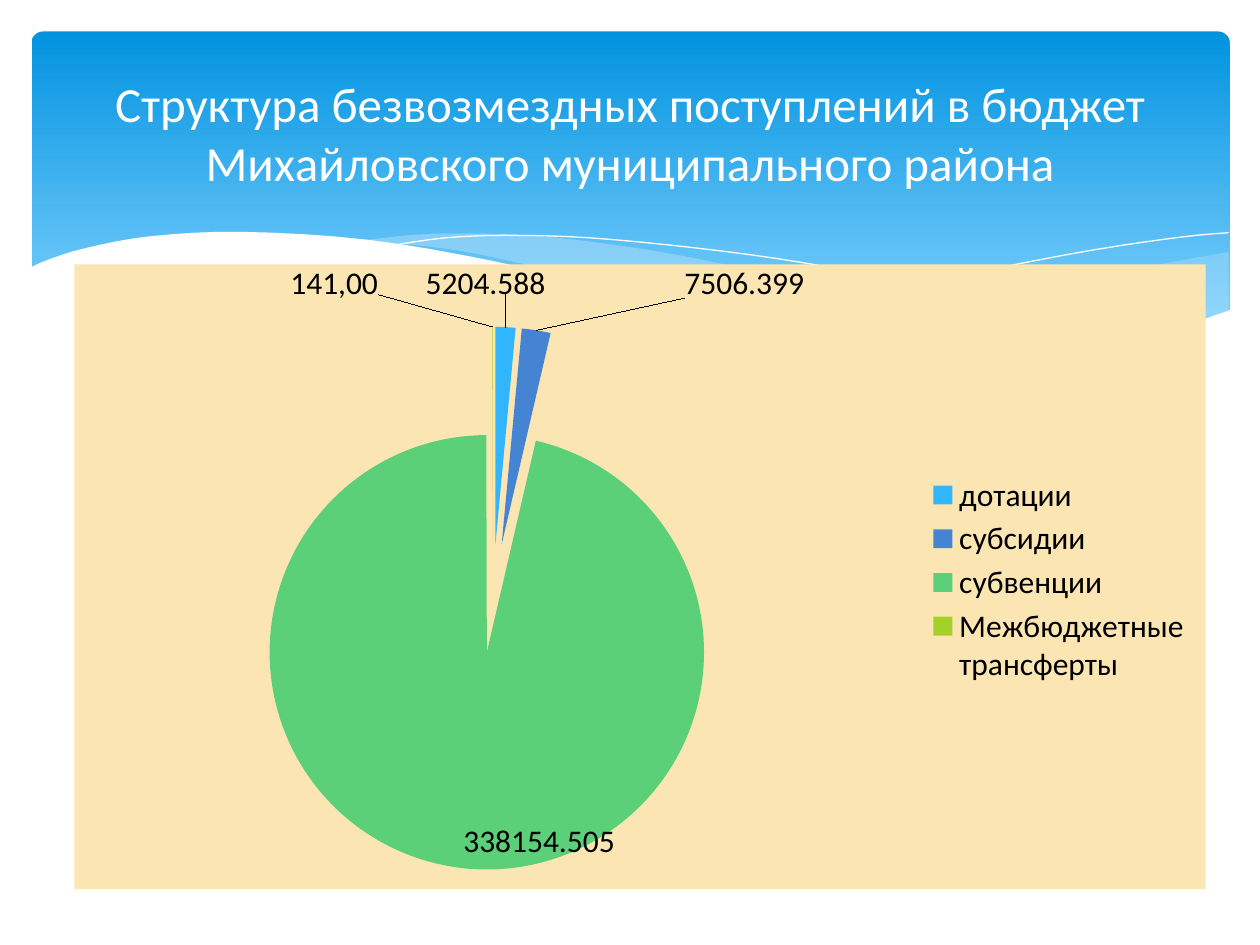
import pptx
import pptx.chart.data
import pptx.dml.color
import pptx.enum.chart
import pptx.enum.shapes
import pptx.enum.text
import pptx.oxml
import pptx.oxml.ns
import pptx.util
from lxml import etree

Pt = pptx.util.Pt
qn = pptx.oxml.ns.qn
FONT = "Calibri"
COLORS = {
    "banner_top": "0293E0", "banner_bottom": "83D3FE", "wave": "C6E7FC",
    "white": "FFFFFF", "text": "000000", "panel": "FBE6B3",
}
GRANTS = [
    ("дотации", 5204.588, "31B6FD"),
    ("субсидии", 7506.399, "4584D3"),
    ("субвенции", 338154.505, "5BD078"),
    ("Межбюджетные трансферты", 141, "A5D028"),
]
# Label shift from the default place, as a share of the chart's size
LABEL_SHIFTS = {0: (-0.018, -0.04), 1: (0.13, -0.04), 3: (-0.14, -0.04)}

RIGHT_WAVE = [
    [(702, 144), (663, 151), (620, 160.5), (561, 174), (508, 185), (476, 191)],
    [(476, 191), (518, 196), (562, 199.5), (601, 199.5), (640, 196),
     (673, 189.5), (702, 178)],
]
MIDDLE_WAVE = [
    [(643, 196.5), (581, 187), (508, 173), (453, 160), (399, 148), (352, 140),
     (302, 134.5), (248, 133.5), (206, 137.5)],
    [(206, 137.5), (261, 143), (323, 156), (382, 167), (445, 181), (500, 191),
     (551, 197.5), (597, 200), (643, 196.5)],
]
LONG_LINE = [[(222.5, 140.5), (254, 136), (289, 134.5), (338, 136), (400, 142),
              (458, 150), (523, 162.5), (598, 180.5), (653, 196)]]
SHORT_LINE = [[(441, 185), (500, 169), (559, 155.5), (624, 143), (675, 135.5),
               (702, 133)]]
WHITE_WAVE = [
    [(703.5, 177), (655, 192.5), (602, 199.5), (548, 198.5), (481, 191),
     (417, 180), (342, 163.5), (281, 149), (210, 137), (139, 132.5), (86, 135),
     (48, 142), (26, 149), (16.5, 153.5)],
    [(16.5, 237), (703.5, 237)],
]


def rgb(name):
    return pptx.dml.color.RGBColor.from_string(COLORS.get(name, name))


def smooth(knots, steps=4):
    """Points of a Catmull-Rom curve through the knots."""
    if len(knots) < 3:
        return knots
    padded = [knots[0], *knots, knots[-1]]
    points = [knots[0]]
    for p0, p1, p2, p3 in zip(padded, padded[1:], padded[2:], padded[3:]):
        for step in range(1, steps + 1):
            t = step / steps
            points.append(tuple(
                0.5 * (2 * b + (c - a) * t + (2 * a - 5 * b + 4 * c - d) * t**2
                       + (3 * b - a - 3 * c + d) * t**3)
                for a, b, c, d in zip(p0, p1, p2, p3)))
    return points


def add_wave(slide, left, top, curves, fill=None, opacity=100):
    """A filled wave, or a thin white line when no fill is given."""
    points = [(Pt(left + x), Pt(top + y)) for curve in curves for x, y in smooth(curve)]
    builder = slide.shapes.build_freeform(*points[0])
    builder.add_line_segments(points[1:], close=fill is not None)
    wave = builder.convert_to_shape()
    wave.shadow.inherit = False
    if fill is None:
        wave.fill.background()
        wave.line.color.rgb = rgb("white")
        wave.line.width = Pt(0)
        return
    wave.line.fill.background()
    wave.fill.solid()
    wave.fill.fore_color.rgb = rgb(fill)
    if opacity < 100:
        color = wave.fill._xPr.find(".//" + qn("a:srgbClr"))
        etree.SubElement(color, qn("a:alpha"), val=str(opacity * 1000))


def add_backdrop(slide, left, top, width):
    banner = slide.shapes.add_shape(
        pptx.enum.shapes.MSO_SHAPE.ROUNDED_RECTANGLE,
        Pt(left + 18), Pt(top + 18), Pt(width - 35.3), Pt(194.4))
    banner.adjustments[0] = 0.034
    banner.shadow.inherit = False
    banner.line.fill.background()
    banner.fill.gradient()
    banner.fill.gradient_angle = 270
    stops = zip(banner.fill.gradient_stops,
                [("banner_top", 0), ("banner_bottom", 0.9)])
    for stop, (name, position) in stops:
        stop.color.rgb = rgb(name)
        stop.position = position
    add_wave(slide, left, top, RIGHT_WAVE, "wave", 29)
    add_wave(slide, left, top, MIDDLE_WAVE, "wave", 40)
    add_wave(slide, left, top, LONG_LINE)
    add_wave(slide, left, top, SHORT_LINE)
    add_wave(slide, left, top, WHITE_WAVE, "white")


def add_title(slide, left, top, width, height):
    frame = slide.shapes.add_textbox(Pt(left), Pt(top), Pt(width), Pt(height)).text_frame
    frame.word_wrap = True
    frame.vertical_anchor = pptx.enum.text.MSO_ANCHOR.MIDDLE
    frame.text = ("Структура безвозмездных поступлений в бюджет "
                  "Михайловского муниципального района")
    heading = frame.paragraphs[0]
    heading.alignment = pptx.enum.text.PP_ALIGN.CENTER
    font = heading.runs[0].font
    font.name, font.size, font.color.rgb = FONT, Pt(28), rgb("white")


def manual_layout(**settings):
    layout = pptx.oxml.parse_xml(
        '<c:layout xmlns:c="http://schemas.openxmlformats.org/drawingml/2006/chart">'
        "<c:manualLayout/></c:layout>")
    for tag, value in settings.items():
        etree.SubElement(layout[0], qn("c:" + tag), val=str(value))
    return layout


def set_layout(parent, index, layout):
    for old in parent.findall(qn("c:layout")):
        parent.remove(old)
    parent.insert(index, layout)


def style_labels(plot):
    positions = pptx.enum.chart.XL_LABEL_POSITION
    plot.has_data_labels = True
    series = plot.series[0]
    labels = series.data_labels
    labels.show_value = True
    labels.position = positions.INSIDE_END
    for leader in labels._element.findall(qn("c:showLeaderLines")):
        leader.set("val", "1")
    for index, (dx, dy) in LABEL_SHIFTS.items():
        label = series.points[index].data_label
        label.position = positions.OUTSIDE_END
        if index == 3:
            label.text_frame.text = "141,00"
            font = label.text_frame.paragraphs[0].runs[0].font
            font.name, font.size, font.color.rgb = FONT, Pt(18), rgb("text")
        element = label._get_or_add_dLbl()
        for tag in ("showLegendKey", "showCatName", "showSerName", "showPercent"):
            element.find(qn("c:" + tag)).set("val", "0")
        set_layout(element, 1, manual_layout(x=dx, y=dy))


def add_grants_pie(slide, left, top, width, height):
    data = pptx.chart.data.CategoryChartData()
    data.categories = [name for name, _, _ in GRANTS]
    data.add_series("Series 1", [value for _, value, _ in GRANTS])
    chart = slide.shapes.add_chart(
        pptx.enum.chart.XL_CHART_TYPE.PIE,
        Pt(left), Pt(top), Pt(width), Pt(height), data).chart
    chart.has_title = False
    chart.font.name, chart.font.size = FONT, Pt(18)
    chart.font.color.rgb = rgb("text")
    chart.has_legend = True
    chart.legend.position = pptx.enum.chart.XL_LEGEND_POSITION.RIGHT
    chart.legend.include_in_layout = False
    set_layout(chart.legend._element, 1, manual_layout(
        xMode="edge", yMode="edge", x=0.75, y=0.33, w=0.24, h=0.35))

    plot = chart.plots[0]
    plot.vary_by_categories = True
    series = plot.series[0]
    for index, (_, _, color) in enumerate(GRANTS):
        fill = series.points[index].format.fill
        fill.solid()
        fill.fore_color.rgb = rgb(color)
    explosion = etree.Element(qn("c:explosion"), val="25")
    series._element.find(qn("c:dPt")).addprevious(explosion)
    style_labels(plot)

    chart_space = chart._chartSpace
    set_layout(chart_space.chart.plotArea, 0, manual_layout(
        layoutTarget="inner", xMode="edge", yMode="edge",
        x=0.13, y=0.1, w=0.48, h=0.87))
    panel = pptx.oxml.parse_xml(
        '<c:spPr xmlns:c="http://schemas.openxmlformats.org/drawingml/2006/chart" '
        'xmlns:a="http://schemas.openxmlformats.org/drawingml/2006/main"><a:solidFill>'
        f'<a:srgbClr val="{COLORS["panel"]}"/></a:solidFill>'
        "<a:ln><a:noFill/></a:ln></c:spPr>")
    chart_space.chart.addnext(panel)


def main():
    deck = pptx.Presentation()
    deck.slide_width, deck.slide_height = Pt(720), Pt(540)
    slide = deck.slides.add_slide(deck.slide_layouts[6])
    add_backdrop(slide, 0, 0, 720)
    add_grants_pie(slide, 42.5, 151, 646.5, 357)
    add_title(slide, 36, 26.5, 648, 98.5)
    deck.save("out.pptx")


if __name__ == "__main__":
    main()
